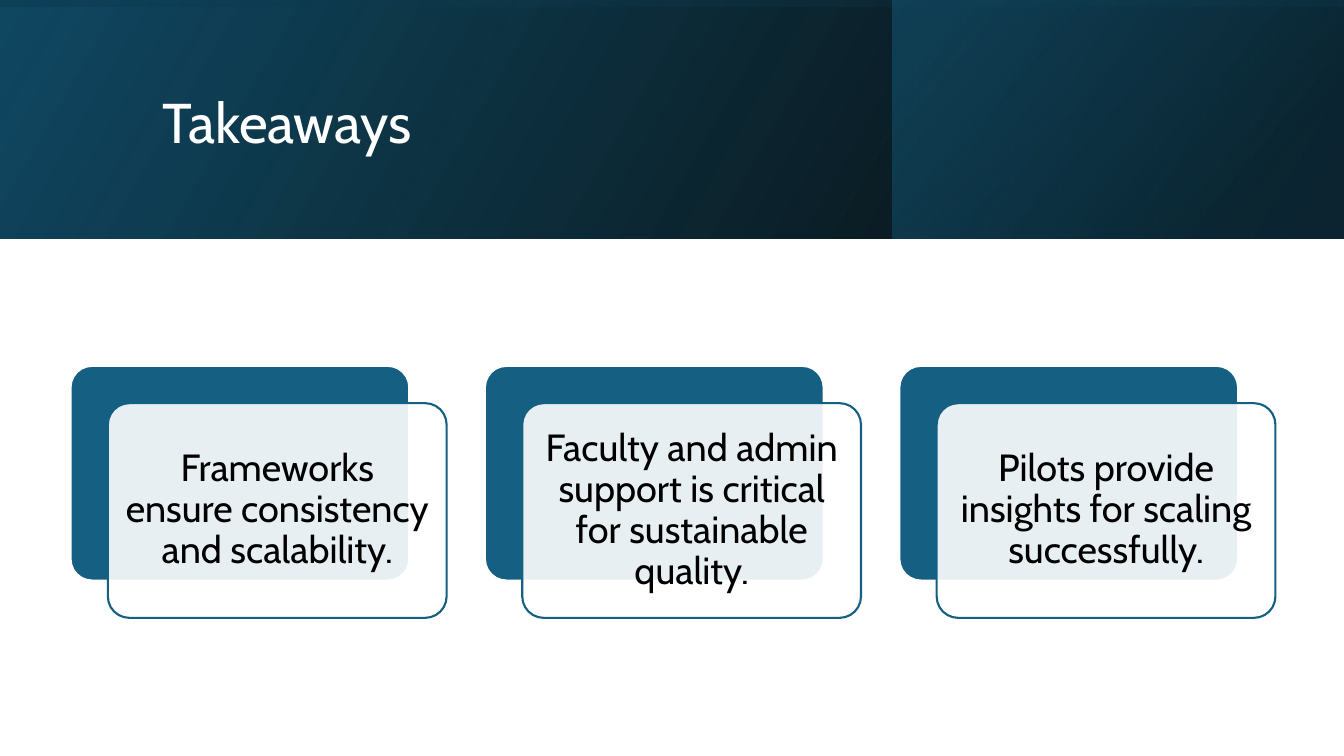
from lxml import etree
from pptx import Presentation
from pptx.dml.color import RGBColor
from pptx.enum.shapes import MSO_SHAPE
from pptx.enum.text import MSO_ANCHOR, PP_ALIGN
from pptx.oxml.ns import qn
from pptx.util import Inches, Pt

RECTANGLE, ROUNDED = MSO_SHAPE.RECTANGLE, MSO_SHAPE.ROUNDED_RECTANGLE
MIDDLE = MSO_ANCHOR.MIDDLE
LEFT, CENTER = PP_ALIGN.LEFT, PP_ALIGN.CENTER
BLACK, WHITE = RGBColor(0, 0, 0), RGBColor(255, 255, 255)
TEAL, DEEP_TEAL = RGBColor(0x15, 0x60, 0x82), RGBColor(0x10, 0x48, 0x62)
NAVY = RGBColor(0x0B, 0x30, 0x41)

TITLE = "Takeaways"
TAKEAWAYS = [
    "Frameworks ensure consistency and scalability.",
    "Faculty and admin support is critical for sustainable quality.",
    "Pilots provide insights for scaling successfully.",
]

SLIDE_W, SLIDE_H = 13.33, 7.5
BANNER_H = 2.37
PANEL_W = 4.48
TURNED_LEFT = (SLIDE_W - BANNER_H) / 2
BANNERS = [
    {"place": (0, 0, SLIDE_W, BANNER_H), "turn": 0, "angle": 330,
     "stops": [(0, BLACK, 96), (1, DEEP_TEAL, 100)]},
    {"place": (SLIDE_W - PANEL_W, 0, PANEL_W, BANNER_H), "turn": 0, "angle": 320,
     "stops": [(0.19, NAVY, 68), (1, TEAL, 48)]},
    {"place": (TURNED_LEFT, -TURNED_LEFT, BANNER_H, SLIDE_W), "turn": 270, "angle": 350,
     "stops": [(0.23, DEEP_TEAL, 16), (0.99, BLACK, 45)]},
]
TITLE_PLACE = (1.51, 0.38, 10.63, 1.72)
TITLE_FORMAT = {"name": "Cabin", "size": Pt(40)}
CARD_FORMAT = {"name": "Cabin", "size": Pt(27)}
CARD_LEFT, CARD_TOP, CARD_W, CARD_H = 0.7, 3.63, 3.36, 2.13
CARD_PITCH = 4.11
CARD_SHIFT = 0.37
TEXT_INSET = 0.06


def set_alpha(color, percent):
    etree.SubElement(color, qn("a:alpha")).set("val", str(percent * 1000))


def add_shape(page, kind, place):
    shape = page.shapes.add_shape(kind, *map(Inches, place))
    shape.shadow.inherit = False
    return shape


def add_banner(page, place, turn, angle, stops):
    banner = add_shape(page, RECTANGLE, place)
    banner.rotation = turn
    banner.line.fill.background()
    banner.fill.gradient()
    banner.fill.gradient_angle = 360 - angle
    for stop, (position, color, _) in zip(banner.fill.gradient_stops, stops):
        stop.position = position
        stop.color.rgb = color
    properties = banner._element.spPr
    properties.find(qn("a:xfrm")).set("flipH", "1")
    for color, (_, _, alpha) in zip(properties.iter(qn("a:srgbClr")), stops):
        set_alpha(color, alpha)


def add_card(page, place, fill, line):
    card = add_shape(page, ROUNDED, place)
    card.adjustments[0] = 0.1
    card.fill.solid()
    card.fill.fore_color.rgb = fill
    card.line.color.rgb = line
    card.line.width = Pt(1.5)
    return card


def add_text(page, place, text, formats, color, align, insets):
    box = page.shapes.add_textbox(*map(Inches, place))
    frame = box.text_frame
    frame.word_wrap = True
    frame.vertical_anchor = MIDDLE
    for side, inset in zip(("left", "top", "right", "bottom"), insets):
        setattr(frame, f"margin_{side}", Inches(inset))
    para = frame.paragraphs[0]
    para.alignment = align
    para.line_spacing = 0.9
    span = para.add_run()
    span.text = text
    for name, value in formats.items():
        setattr(span.font, name, value)
    span.font.color.rgb = color


def main():
    """Build the takeaways slide with its banner and three layered cards."""
    deck = Presentation()
    deck.slide_width, deck.slide_height = Inches(SLIDE_W), Inches(SLIDE_H)
    page = deck.slides.add_slide(deck.slide_layouts[6])
    for banner in BANNERS:
        add_banner(page, **banner)
    add_text(page, TITLE_PLACE, TITLE, TITLE_FORMAT, WHITE, LEFT, (0.1, 0.05, 0.1, 0.05))
    for column, takeaway in enumerate(TAKEAWAYS):
        left = CARD_LEFT + column * CARD_PITCH
        add_card(page, (left, CARD_TOP, CARD_W, CARD_H), TEAL, WHITE)
        left, top = left + CARD_SHIFT, CARD_TOP + CARD_SHIFT
        front = add_card(page, (left, top, CARD_W, CARD_H), WHITE, TEAL)
        set_alpha(next(front._element.spPr.iter(qn("a:srgbClr"))), 90)
        place = (left + TEXT_INSET, top + TEXT_INSET,
                 CARD_W - 2 * TEXT_INSET, CARD_H - 2 * TEXT_INSET)
        add_text(page, place, takeaway, CARD_FORMAT, BLACK, CENTER, (0.11,) * 4)
    deck.save("out.pptx")


if __name__ == "__main__":
    main()
